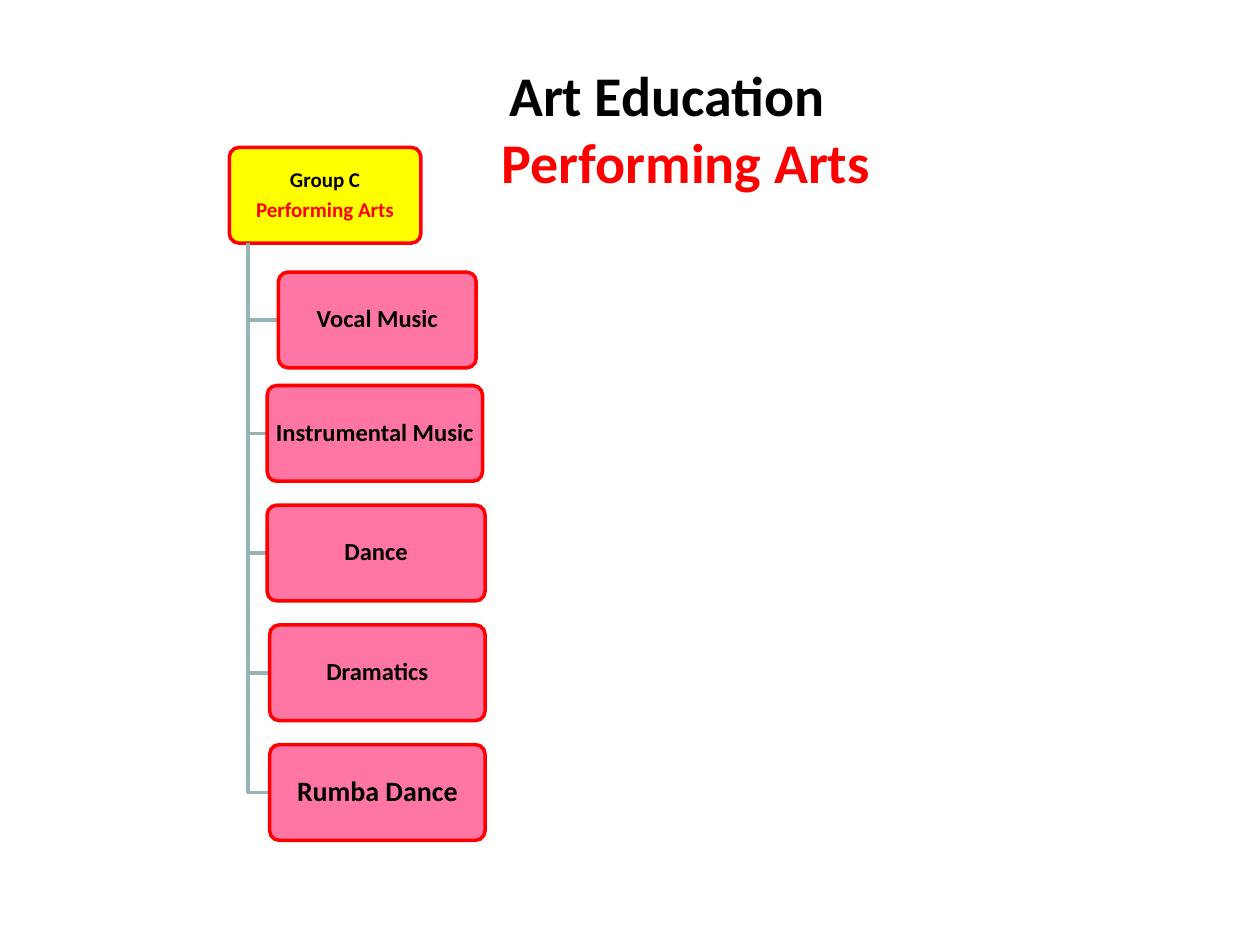
from dataclasses import dataclass

from lxml.etree import SubElement
from pptx import Presentation
from pptx.dml.color import RGBColor
from pptx.enum.shapes import MSO_SHAPE
from pptx.enum.text import MSO_ANCHOR, PP_ALIGN
from pptx.oxml.ns import qn
from pptx.util import Inches, Pt


@dataclass(frozen=True)
class Theme:
    font: str = "Calibri"
    black: str = "000000"
    red: str = "FF0000"
    yellow: str = "FFFF00"
    pink: str = "FF6699"
    branch: str = "96B3B6"
    title: int = 32
    group: int = 12
    item: int = 14
    large: int = 16
    line: int = 2


THEME = Theme()
ROOT = (1.82, 1.17, 1.52)  # left, top, width
HIGH = 0.76
TRUNK = 1.97
ITEMS = [  # text, left, top, width, type size
    ("Vocal Music", 2.21, 2.16, 1.57, THEME.item),
    ("Instrumental Music", 2.12, 3.06, 1.71, THEME.item),
    ("Dance", 2.12, 4.01, 1.73, THEME.item),
    ("Dramatics", 2.14, 4.96, 1.71, THEME.item),
    ("Rumba Dance", 2.14, 5.91, 1.71, THEME.large),
]


def color(code):
    return RGBColor.from_string(code)


def write(frame, text, size, tint=THEME.black, first=True, shift=0,
          space=0, lead=None):
    """Add one centred paragraph; shift is its left margin in inches."""
    para = frame.paragraphs[0] if first else frame.add_paragraph()
    para.alignment = PP_ALIGN.CENTER
    para.space_after = Pt(space)
    if lead:
        para.line_spacing = lead
    if shift:
        para._p.get_or_add_pPr().set("marL", str(Inches(shift)))
    run = para.add_run()
    run.text = text
    font = run.font
    font.name, font.size, font.bold = THEME.font, Pt(size), True
    font.color.rgb = color(tint)


def add_box(slide, left, top, width, fill, lines, size, alpha=None):
    """Draw a rounded box holding (text, colour) lines."""
    box = slide.shapes.add_shape(
        MSO_SHAPE.ROUNDED_RECTANGLE,
        Inches(left), Inches(top), Inches(width), Inches(HIGH))
    box.adjustments[0] = 0.1
    box.shadow.inherit = False
    box.fill.solid()
    box.fill.fore_color.rgb = color(fill)
    if alpha:
        tone = box._element.spPr.find(qn("a:solidFill"))[0]
        SubElement(tone, qn("a:alpha")).set("val", str(alpha * 1000))
    box.line.color.rgb = color(THEME.red)
    box.line.width = Pt(THEME.line)
    frame = box.text_frame
    frame.word_wrap = True
    frame.vertical_anchor = MSO_ANCHOR.MIDDLE
    frame.margin_left = frame.margin_right = Inches(0.02)
    frame.margin_top = frame.margin_bottom = Inches(0.02)
    for i, (text, tint) in enumerate(lines):
        write(frame, text, size, tint, first=i == 0,
              space=round(size * 0.35, 1), lead=0.9)


def add_branch(slide, left, mid):
    """Draw an elbow from the root box to the left edge of an item."""
    pen = slide.shapes.build_freeform(
        Inches(TRUNK), Inches(ROOT[1] + HIGH), scale=1.0)
    pen.add_line_segments(
        [(Inches(TRUNK), Inches(mid)), (Inches(left), Inches(mid))],
        close=False)
    elbow = pen.convert_to_shape()
    elbow.shadow.inherit = False
    elbow.fill.background()
    elbow.line.color.rgb = color(THEME.branch)
    elbow.line.width = Pt(THEME.line)


def add_title(slide):
    box = slide.shapes.add_textbox(
        Inches(1.75), Inches(0.43), Inches(6.69), Inches(1.72))
    frame = box.text_frame
    frame.word_wrap = True
    write(frame, "Art Education", THEME.title, shift=0.4)
    write(frame, "Performing Arts", THEME.title, THEME.red,
          first=False, shift=0.7)


def main():
    deck = Presentation()
    deck.slide_width, deck.slide_height = Inches(10), Inches(7.5)
    slide = deck.slides.add_slide(deck.slide_layouts[6])
    add_box(slide, *ROOT, THEME.yellow,
            [("Group C", THEME.black), ("Performing Arts", THEME.red)],
            THEME.group)
    for text, left, top, width, size in ITEMS:
        add_branch(slide, left, top + HIGH / 2)
        add_box(slide, left, top, width, THEME.pink,
                [(text, THEME.black)], size, alpha=90)
    add_title(slide)
    deck.save("out.pptx")


if __name__ == "__main__":
    main()
